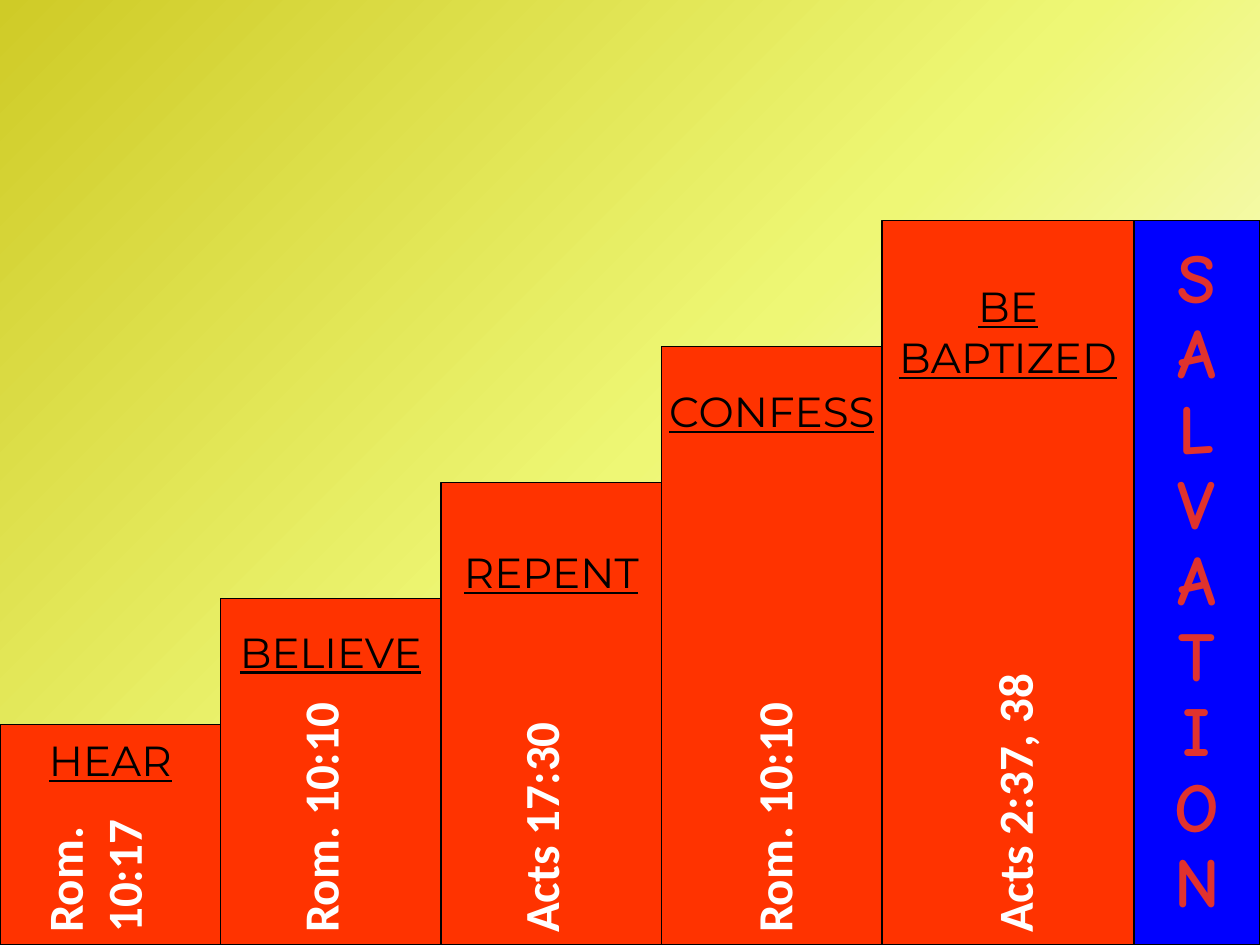
from copy import deepcopy
from dataclasses import dataclass

from pptx import Presentation
from pptx.dml.color import RGBColor
from pptx.enum.shapes import MSO_SHAPE
from pptx.enum.text import MSO_ANCHOR, MSO_AUTO_SIZE, PP_ALIGN
from pptx.oxml.ns import qn
from pptx.util import Inches, Pt

COLOURS = {
    "olive": "CFCB27",
    "lemon": "EEF775",
    "white": "FFFFFF",
    "black": "000000",
    "step": "FF3300",
    "goal": "0000FF",
    "goal_text": "E0322D",
}
SLIDE_WIDTH, SLIDE_HEIGHT = 10, 7.5
STEP_WIDTH = 1.75


@dataclass
class Verse:
    text: str
    left: float
    top: float
    width: float
    height: float = 0.57


@dataclass
class Step:
    label: list[str]
    top: float
    label_offset: float
    verse: Verse
    width: float = STEP_WIDTH


STEPS = [
    Step(["HEAR"], 5.75, 0.08, Verse("Rom. 10:17", 0.11, 6.36, 1.25, 1.03)),
    Step(["BELIEVE"], 4.75, 0.22, Verse("Rom. 10:10", 1.37, 6.05, 2.33)),
    Step(["REPENT"], 3.83, 0.51, Verse("Acts 17:30", 2.91, 5.84, 2.75)),
    Step(["CONFESS"], 2.75, 0.31, Verse("Rom. 10:10", 4.76, 5.84, 2.75)),
    Step(["BE", "BAPTIZED"], 1.75, 0.48, Verse("Acts 2:37, 38", 6.67, 5.84, 2.75), 2),
]


def colour(name: str) -> RGBColor:
    """Return the named colour."""
    return RGBColor.from_string(COLOURS[name])


def paint_background(slide) -> None:
    """Fill the slide with a diagonal gradient of three stops."""
    fill = slide.background.fill
    fill.gradient()
    fill.gradient_angle = 315
    stop_list = slide.element.find(".//" + qn("a:gsLst"))
    stop_list.insert(1, deepcopy(stop_list[0]))
    for stop, name, position in zip(fill.gradient_stops, ("olive", "lemon", "white"), (0, 0.5, 1)):
        stop.color.rgb = colour(name)
        stop.position = position


def add_column(slide, left: float, top: float, width: float, fill: str):
    """Draw an outlined column down to the slide's foot and return its text frame."""
    column = slide.shapes.add_shape(
        MSO_SHAPE.RECTANGLE, Inches(left), Inches(top), Inches(width), Inches(SLIDE_HEIGHT - top)
    )
    column.shadow.inherit = False
    column.fill.solid()
    column.fill.fore_color.rgb = colour(fill)
    column.line.color.rgb = colour("black")
    column.line.width = Pt(0.75)
    column.text_frame.word_wrap = False
    return column.text_frame


def add_run(paragraph, text: str, font_name: str, size: float, tint: str, bold: bool = False):
    """Add one styled run to a paragraph."""
    run = paragraph.add_run()
    run.text = text
    run.font.name = font_name
    run.font.size = Pt(size)
    run.font.bold = bold
    run.font.color.rgb = colour(tint)
    return run


def add_step(slide, left: float, step: Step) -> None:
    """Draw one step with its underlined label."""
    frame = add_column(slide, left, step.top, step.width, "step")
    frame.vertical_anchor = MSO_ANCHOR.TOP
    frame.margin_top = Inches(step.label_offset)
    for index, line in enumerate(step.label):
        paragraph = frame.add_paragraph() if index else frame.paragraphs[0]
        paragraph.alignment = PP_ALIGN.CENTER
        add_run(paragraph, line, "Montserrat", 24, "black").font.underline = True


def add_goal(slide, left: float, top: float, word: str) -> None:
    """Draw the last column with its word set one letter to a line."""
    frame = add_column(slide, left, top, SLIDE_WIDTH - left, "goal")
    frame.vertical_anchor = MSO_ANCHOR.MIDDLE
    paragraph = frame.paragraphs[0]
    paragraph.alignment = PP_ALIGN.CENTER
    paragraph.line_spacing = 0.9
    paragraph.font.size = Pt(40)
    for index, letter in enumerate(word):
        if index:
            paragraph.add_line_break()
        run = add_run(paragraph, letter, "Comic Neue", 40, "goal_text", True)
        run.font._element.set("spc", "50")
    for line_break in paragraph._p.findall(qn("a:br")):
        line_break.append(deepcopy(run.font._element))


def add_verse(slide, verse: Verse) -> None:
    """Write a verse reference that reads upwards."""
    reference = slide.shapes.add_textbox(
        Inches(verse.left), Inches(verse.top), Inches(verse.width), Inches(verse.height)
    )
    reference.rotation = 270
    frame = reference.text_frame
    frame.word_wrap = True
    frame.auto_size = MSO_AUTO_SIZE.SHAPE_TO_FIT_TEXT
    add_run(frame.paragraphs[0], verse.text, "Calibri", 28, "white", True)


def main() -> None:
    """Build the stairway slide and save it."""
    presentation = Presentation()
    presentation.slide_width = Inches(SLIDE_WIDTH)
    presentation.slide_height = Inches(SLIDE_HEIGHT)
    slide = presentation.slides.add_slide(presentation.slide_layouts[6])
    paint_background(slide)
    left = 0
    for step in STEPS:
        add_step(slide, left, step)
        left += step.width
    add_goal(slide, left, STEPS[-1].top, "SALVATION")
    for step in STEPS:
        add_verse(slide, step.verse)
    presentation.save("out.pptx")


if __name__ == "__main__":
    main()
